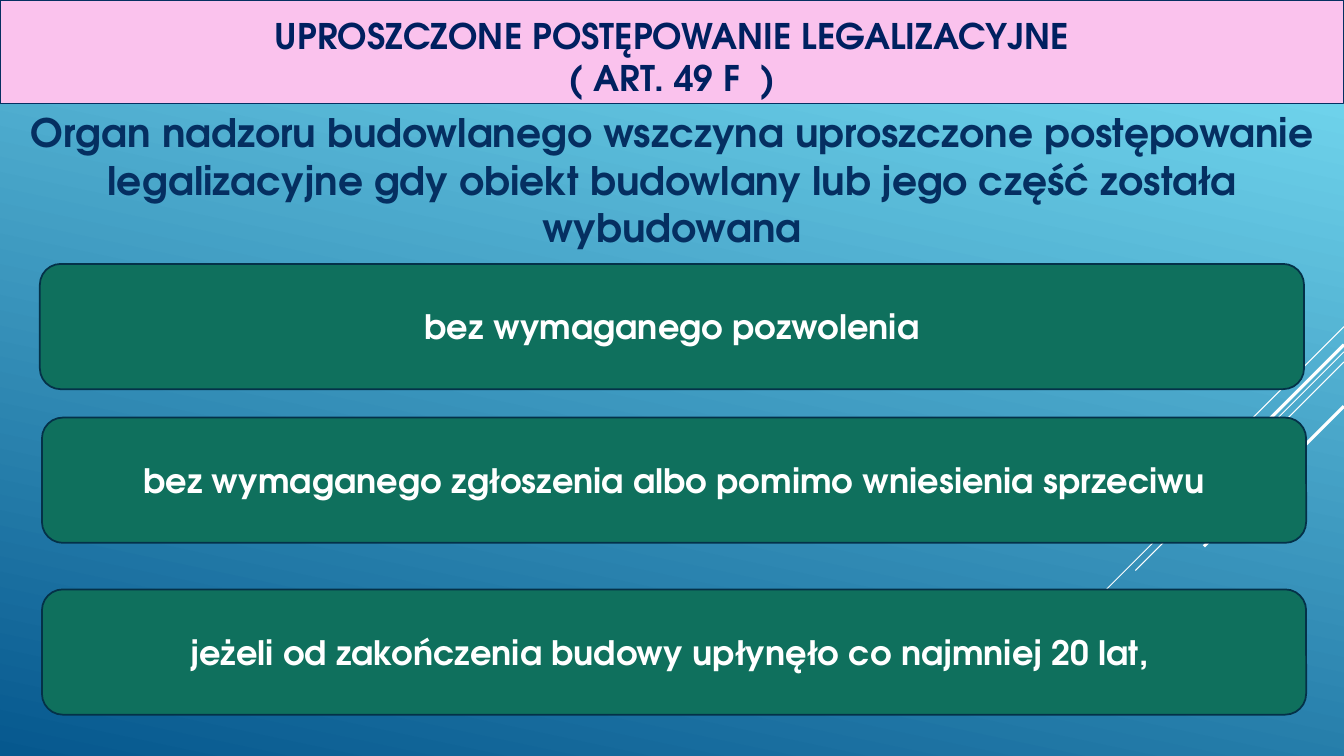
from pptx import Presentation
from pptx.dml.color import RGBColor
from pptx.enum.shapes import MSO_CONNECTOR, MSO_SHAPE
from pptx.enum.text import MSO_ANCHOR, MSO_AUTO_SIZE, PP_ALIGN
from pptx.oxml.ns import qn
from pptx.util import Pt

STRAIGHT = MSO_CONNECTOR.STRAIGHT
ROUNDED = MSO_SHAPE.ROUNDED_RECTANGLE
CENTER = PP_ALIGN.CENTER
TOP, MIDDLE, BOTTOM = MSO_ANCHOR.TOP, MSO_ANCHOR.MIDDLE, MSO_ANCHOR.BOTTOM
NO_FIT = MSO_AUTO_SIZE.NONE

WIDTH, HEIGHT = 960, 540
TITLE_HEIGHT = 74.16
FONT = "TeX Gyre Adventor"
NAVY = "052F61"

TITLE = "UPROSZCZONE POSTĘPOWANIE LEGALIZACYJNE\v( ART. 49 F  )"
INTRO = ("Organ nadzoru budowlanego wszczyna uproszczone postępowanie "
         "legalizacyjne gdy obiekt budowlany lub jego część została wybudowana")
# left, top, text
CONDITIONS = [
    (28.5, 188.5, "bez wymaganego pozwolenia"),
    (30, 298.25, "bez wymaganego zgłoszenia albo pomimo wniesienia sprzeciwu"),
    (30, 421, "jeżeli od zakończenia budowy upłynęło co najmniej 20 lat, "),
]
# start on the right edge, horizontal run, line width
RAYS = [(233.3, 72, 0.75), (251.3, 234.7, 0.75), (258.5, 149, 0.75),
        (246.2, 137.5, 2.25), (290.2, 100, 2.25)]


def rgb(color):
    return RGBColor.from_string(color)


def write(s, text, size, color, anchor):
    tf = s.text_frame
    tf.word_wrap = True
    tf.auto_size = NO_FIT
    tf.vertical_anchor = anchor
    tf.text = text
    p = tf.paragraphs[0]
    p.alignment = CENTER
    for r in p.runs:
        r.font.name = FONT
        r.font.size = Pt(size)
        r.font.bold = True
        r.font.color.rgb = rgb(color)


def paint(s, fill, line, width):
    s.fill.solid()
    s.fill.fore_color.rgb = rgb(fill)
    s.line.color.rgb = rgb(line)
    s.line.width = Pt(width)


def add_background(slide):
    fill = slide.background.fill
    fill.gradient()
    fill.gradient_angle = 258
    for stop, position, color in zip(fill.gradient_stops, (0.1, 1), ("6ED2EB", "06588E")):
        stop.position = position
        stop.color.rgb = rgb(color)


def add_rays(slide, right):
    """Draw the 45° lines falling to the left from the right edge."""
    for top, run, width in RAYS:
        ray = slide.shapes.add_connector(
            STRAIGHT, Pt(right), Pt(top), Pt(right - run), Pt(top + run))
        ray.line.color.rgb = rgb("FFFFFF")
        ray.line.width = Pt(width)
        sp_pr = ray._element.spPr
        sp_pr.append(sp_pr.makeelement(qn("a:effectLst"), {}))


def add_title(slide, left, top, width, height):
    s = slide.shapes.title
    s.left, s.top, s.width, s.height = Pt(left), Pt(top), Pt(width), Pt(height)
    paint(s, "FAC2ED", NAVY, 0.75)
    write(s, TITLE, 25.2, "002060", BOTTOM)


def add_intro(slide, left, top, width, height):
    s = slide.shapes.add_textbox(Pt(left), Pt(top), Pt(width), Pt(height))
    write(s, INTRO, 28, NAVY, TOP)


def add_condition(slide, left, top, width, height, text):
    s = slide.shapes.add_shape(ROUNDED, Pt(left), Pt(top), Pt(width), Pt(height))
    s.shadow.inherit = False
    paint(s, "0F705D", "043148", 1.25)
    write(s, text, 24, "FFFFFF", MIDDLE)


def main():
    prs = Presentation()
    prs.slide_width, prs.slide_height = Pt(WIDTH), Pt(HEIGHT)
    slide = prs.slides.add_slide(prs.slide_layouts.get_by_name("Title Only"))
    add_background(slide)
    add_rays(slide, WIDTH)
    add_title(slide, 0, 0, WIDTH, TITLE_HEIGHT)
    add_intro(slide, 0, TITLE_HEIGHT, WIDTH, 110)
    for left, top, text in CONDITIONS:
        add_condition(slide, left, top, 903, 89.5, text)
    prs.save("out.pptx")


if __name__ == "__main__":
    main()
